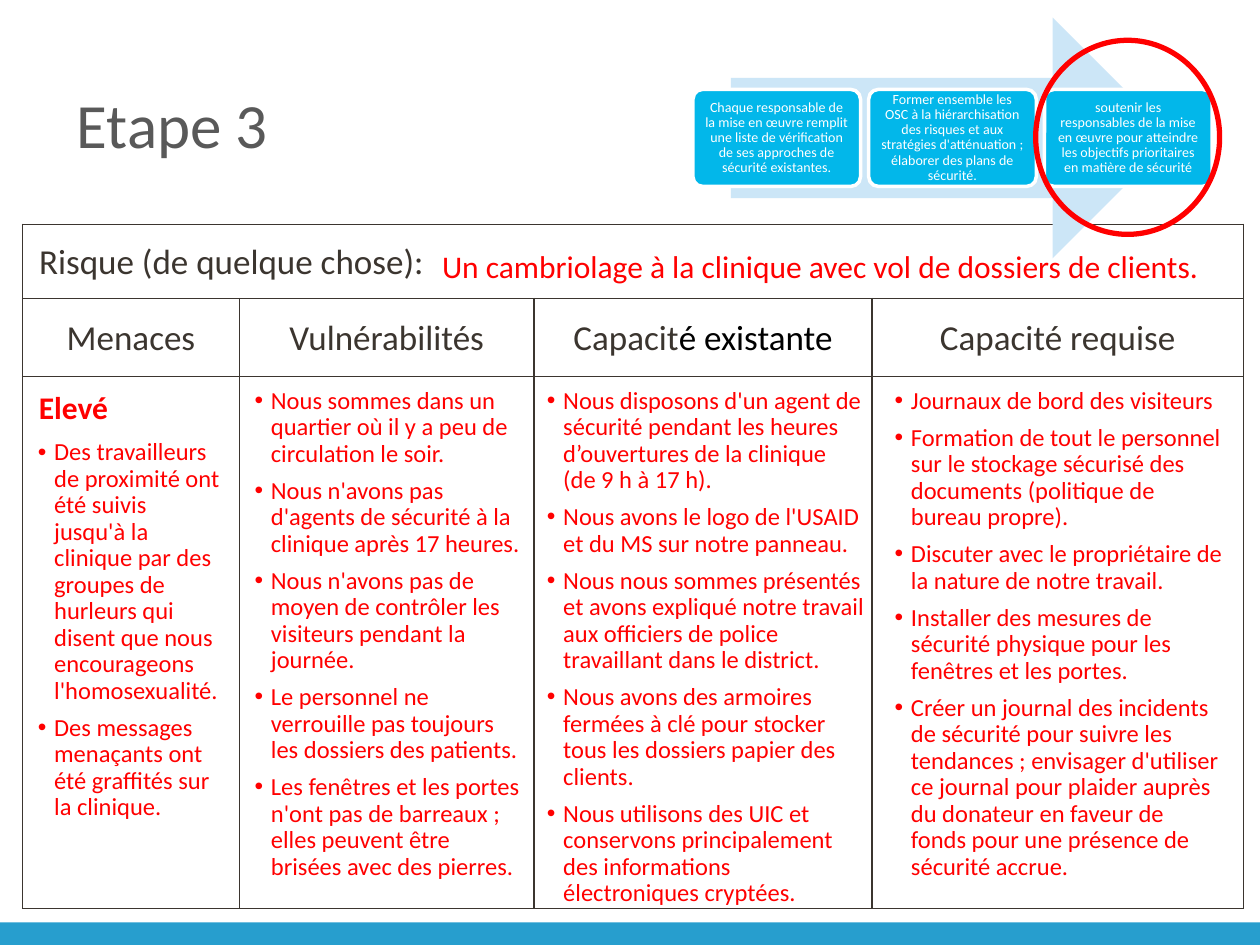
from lxml import etree
from pptx import Presentation
from pptx.dml.color import RGBColor
from pptx.enum.shapes import MSO_SHAPE
from pptx.enum.text import MSO_ANCHOR, MSO_AUTO_SIZE, PP_ALIGN
from pptx.oxml.ns import qn
from pptx.util import Inches, Pt

ARROW, RECT = MSO_SHAPE.RIGHT_ARROW, MSO_SHAPE.RECTANGLE
ROUNDED, OVAL = MSO_SHAPE.ROUNDED_RECTANGLE, MSO_SHAPE.OVAL
MIDDLE, TOP = MSO_ANCHOR.MIDDLE, MSO_ANCHOR.TOP
LEFT, CENTER = PP_ALIGN.LEFT, PP_ALIGN.CENTER
FIXED_SIZE = MSO_AUTO_SIZE.NONE
COMPARISON_LAYOUT = 4  # a title and four text areas

RED, INK, WHITE, BLACK = "FF0000", "3B352F", "FFFFFF", "000000"
GREY, BAR_BLUE, PALE_BLUE, STEP_BLUE = "595959", "279ECE", "CCE6F7", "02B7EA"


def color(value):
    return RGBColor.from_string(value)


class RiskSlide:
    font_name = "Calibri"

    def __init__(self, page):
        self.page = page

    def place(self, shape, left, top, width, height):
        shape.left, shape.top = Inches(left), Inches(top)
        shape.width, shape.height = Inches(width), Inches(height)

    def style(self, para, size, ink, align=LEFT, bold=False):
        para.alignment = align
        para.font.name, para.font.size = self.font_name, Pt(size)
        para.font.bold = bold
        para.font.color.rgb = color(ink)

    def title(self, text, *at):
        box = self.page.shapes.title
        self.place(box, *at)
        frame = box.text_frame
        frame.text = text
        frame.vertical_anchor, frame.auto_size = MIDDLE, FIXED_SIZE
        self.style(frame.paragraphs[0], 36, GREY)

    def bullets(self, box, items, *at):
        self.place(box, *at)
        frame = box.text_frame
        frame.word_wrap = True
        frame.vertical_anchor, frame.auto_size = TOP, FIXED_SIZE
        frame.text = "\n".join(items)
        for index, para in enumerate(frame.paragraphs):
            properties = para._p.get_or_add_pPr()
            properties.set("marL", str(Inches(0.13)))
            properties.set("indent", str(Inches(-0.13)))
            etree.SubElement(properties, qn("a:buFont"), typeface="Arial")
            etree.SubElement(properties, qn("a:buChar"), char="•")
            para.line_spacing = 0.9
            para.space_before = Pt(6 if index else 0)
            self.style(para, 14, RED)

    def label(self, text, *at, bold=False):
        box = self.page.shapes.add_textbox(*map(Inches, at))
        box.text_frame.word_wrap = True
        box.text_frame.text = text
        self.style(box.text_frame.paragraphs[0], 18, RED, bold=bold)

    def shape(self, kind, *at, fill=None, line=None, weight=1):
        shape = self.page.shapes.add_shape(kind, *map(Inches, at))
        shape.shadow.inherit = False
        if fill:
            shape.fill.solid()
            shape.fill.fore_color.rgb = color(fill)
        else:
            shape.fill.background()
        if line:
            shape.line.color.rgb = color(line)
            shape.line.width = Pt(weight)
        else:
            shape.line.fill.background()
        return shape

    def step(self, text, *at):
        box = self.shape(ROUNDED, *at, fill=STEP_BLUE, line=WHITE, weight=2)
        box.adjustments[0] = 0.1
        frame = box.text_frame
        frame.word_wrap, frame.vertical_anchor = True, MIDDLE
        frame.margin_left = frame.margin_right = Inches(0.07)
        frame.margin_top = frame.margin_bottom = Inches(0.07)
        frame.text = text
        frame.paragraphs[0].line_spacing = 0.9
        self.style(frame.paragraphs[0], 8, WHITE, CENTER)

    def cell_border(self, cell):
        properties = cell._tc.get_or_add_tcPr()
        for position, side in enumerate(("lnL", "lnR", "lnT", "lnB")):
            line = etree.Element(qn(f"a:{side}"), w=str(Pt(1)))
            fill = etree.SubElement(line, qn("a:solidFill"))
            etree.SubElement(fill, qn("a:srgbClr"), val=INK)
            properties.insert(position, line)

    def cell_text(self, cell, spans, align=CENTER, left=0.01):
        cell.margin_left, cell.margin_right = Inches(left), Inches(0.01)
        cell.margin_top, cell.margin_bottom = Inches(0.01), 0
        cell.vertical_anchor = MIDDLE
        para = cell.text_frame.paragraphs[0]
        self.style(para, 20, INK, align)
        for text, ink in spans:
            span = para.add_run()
            span.text = text
            if ink != INK:
                span.font.color.rgb = color(ink)

    def risk_table(self, heading, headers, widths, heights, left, top):
        table = self.page.shapes.add_table(
            len(heights), len(widths), Inches(left), Inches(top),
            Inches(sum(widths)), Inches(sum(heights))).table
        table.first_row = table.horz_banding = False
        for column, width in zip(table.columns, widths):
            column.width = Inches(width)
        for row, height in zip(table.rows, heights):
            row.height = Inches(height)
        for cell in table.iter_cells():
            cell.fill.background()
            self.cell_border(cell)
        table.cell(0, 0).merge(table.cell(0, len(widths) - 1))
        self.cell_text(table.cell(0, 0), [(heading, INK)], LEFT, 0.13)
        for index, spans in enumerate(headers):
            self.cell_text(table.cell(1, index), spans)


THREATS = [
    "Des travailleurs de proximité ont été suivis jusqu'à la clinique par des groupes de hurleurs qui disent que nous encourageons l'homosexualité.",
    "Des messages menaçants ont été graffités sur la clinique.",
]
VULNERABILITIES = [
    "Nous sommes dans un quartier où il y a peu de circulation le soir.",
    "Nous n'avons pas d'agents de sécurité à la clinique après 17 heures.",
    "Nous n'avons pas de moyen de contrôler les visiteurs pendant la journée.",
    "Le personnel ne verrouille pas toujours les dossiers des patients.",
    "Les fenêtres et les portes n'ont pas de barreaux ; elles peuvent être brisées avec des pierres.",
]
EXISTING_CAPACITY = [
    "Nous disposons d'un agent de sécurité pendant les heures d’ouvertures de la clinique (de 9 h à 17 h).",
    "Nous avons le logo de l'USAID et du MS sur notre panneau.",
    "Nous nous sommes présentés et avons expliqué notre travail aux officiers de police travaillant dans le district.",
    "Nous avons des armoires fermées à clé pour stocker tous les dossiers papier des clients.",
    "Nous utilisons des UIC et conservons principalement des informations électroniques cryptées.",
]
REQUIRED_CAPACITY = [
    "Journaux de bord des visiteurs",
    "Formation de tout le personnel sur le stockage sécurisé des documents (politique de bureau propre).",
    "Discuter avec le propriétaire de la nature de notre travail.",
    "Installer des mesures de sécurité physique pour les fenêtres et les portes.",
    "Créer un journal des incidents de sécurité pour suivre les tendances ; envisager d'utiliser ce journal pour plaider auprès du donateur en faveur de fonds pour une présence de sécurité accrue.",
]
LISTS = [
    (THREATS, 0.2, 3.44, 1.65, 3.16),
    (VULNERABILITIES, 1.92, 3.03, 2.31, 4.04),
    (EXISTING_CAPACITY, 4.24, 3.03, 2.72, 4.25),
    (REQUIRED_CAPACITY, 7, 3.03, 2.81, 4.04),
]
HEADERS = [
    [("Menaces", INK)],
    [("Vulnérabilités", INK)],
    [("Capacit", INK), ("é existante", BLACK)],
    [("Capacité requise", INK)],
]
STEPS = [
    "Chaque responsable de la mise en œuvre remplit une liste de vérification de ses approches de sécurité existantes.",
    "Former ensemble les OSC à la hiérarchisation des risques et aux stratégies d'atténuation ; élaborer des plans de sécurité.",
    "soutenir les responsables de la mise en œuvre pour atteindre les objectifs prioritaires en matière de sécurité",
]


def main():
    deck = Presentation()
    deck.slide_width, deck.slide_height = Inches(10), Inches(7.5)
    page = deck.slides.add_slide(deck.slide_layouts[COMPARISON_LAYOUT])
    slide = RiskSlide(page)

    # Title and footer bar
    slide.title("Etape 3", 0.51, 0.45, 8.99, 1.06)
    slide.shape(RECT, 0, 7.32, 10, 0.18, fill=BAR_BLUE)

    # Risk table with its lists
    slide.risk_table("Risque (de quelque chose):", HEADERS,
                     [1.72, 2.34, 2.68, 2.95], [0.59, 0.62, 4.22], 0.18, 1.78)
    slide.label("Elevé", 0.21, 3.03, 1.04, 0.4, bold=True)
    slide.label("Un cambriolage à la clinique avec vol de dossiers de clients.",
                3.41, 1.91, 6.41, 0.4)
    areas = list(page.placeholders)[1:]
    for area, (items, *at) in zip(areas, LISTS):
        slide.bullets(area, items, *at)

    # Process arrow with the third step circled
    slide.shape(ARROW, 5.8, 0.14, 3.51, 1.91, fill=PALE_BLUE)
    for index, text in enumerate(STEPS):
        slide.step(text, 5.5 + 1.395 * index, 0.71, 1.33, 0.77)
    slide.shape(OVAL, 8.22, 0.32, 1.46, 1.54, line=RED, weight=3)

    deck.save("out.pptx")


if __name__ == "__main__":
    main()
